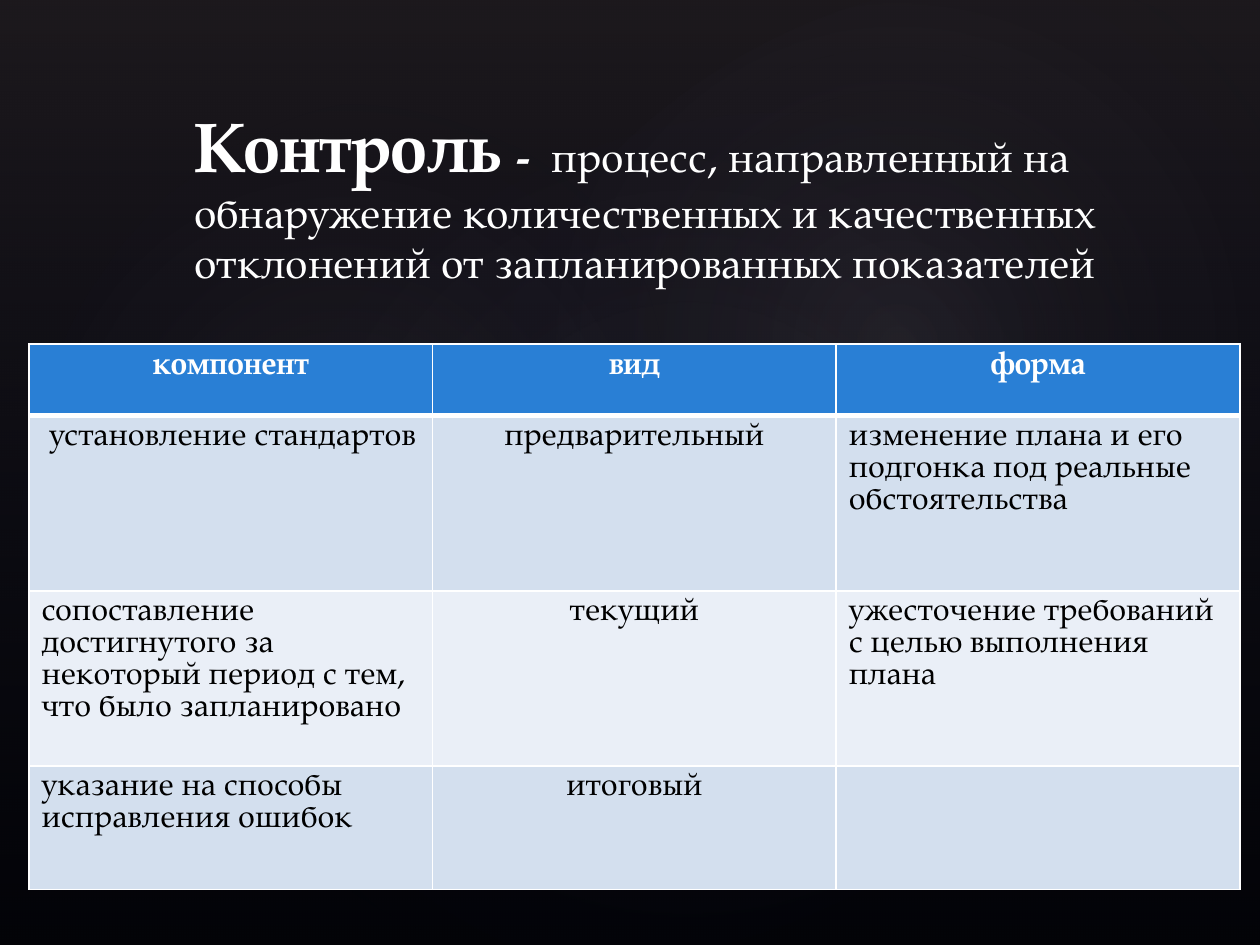
from lxml import etree
from pptx import Presentation
from pptx.dml.color import RGBColor
from pptx.enum.shapes import MSO_SHAPE
from pptx.enum.text import MSO_ANCHOR, PP_ALIGN
from pptx.oxml import parse_xml
from pptx.oxml.ns import nsdecls, qn
from pptx.util import Inches, Pt

FONT = "TeX Gyre Pagella"
WHITE = RGBColor(0xFF, 0xFF, 0xFF)
BLACK = RGBColor(0x00, 0x00, 0x00)
HEADER_BLUE = RGBColor(0x29, 0x7F, 0xD5)
BAND_DARK = RGBColor(0xD3, 0xDF, 0xEE)
BAND_LIGHT = RGBColor(0xEA, 0xEF, 0xF7)
PLUM = RGBColor(0x50, 0x46, 0x52)
NAVY = RGBColor(0x24, 0x28, 0x52)
MIST = RGBColor(0xC4, 0xBC, 0xC6)

# Content: title runs are text, size, bold
TITLE = [
    ("Контроль ", 40, True),
    ("-  ", 24, True),
    ("процесс, направленный на обнаружение количественных и качественных "
     "отклонений от запланированных показателей", 24, False),
]
HEADERS = ["компонент", "вид", "форма"]
ROWS = [
    (" установление стандартов", "предварительный",
     "изменение плана и его подгонка под реальные обстоятельства"),
    ("сопоставление достигнутого за некоторый период с тем, что было запланировано",
     "текущий", "ужесточение требований с целью выполнения плана"),
    ("указание на способы исправления ошибок", "итоговый", ""),
]
ROW_HEIGHTS = [0.57, 1.39, 1.39, 0.98]
TABLE_LEFT, TABLE_TOP, TABLE_WIDTH = 0.23, 2.73, 9.61
CENTERED_COLUMN = 1

# Background glows: left, top, width, height, rotation, opacity in percent
GLOWS = [
    (1.5, 1.14, 7.92, 6.24, 328.7, 7),
    (-0.3, 1.28, 6.06, 4.9, 294.3, 8),
    (3.58, 0.13, 7.09, 5.2, 328.7, 8),
]
LINEAR = '<a:lin ang="5400000" scaled="0"/>'
RADIAL = ('<a:path path="circle"><a:fillToRect l="50000" t="50000" '
          'r="50000" b="50000"/></a:path>')


def add_gradient_shape(slide, preset, box, stops, direction, rotation=0):
    shape = slide.shapes.add_shape(preset, *map(Inches, box))
    shape.rotation = rotation
    shape.shadow.inherit = False
    shape.line.fill.background()
    stop_xml = "".join(
        f'<a:gs pos="{pos * 1000}"><a:srgbClr val="{color}">'
        f'<a:alpha val="{opacity * 1000}"/></a:srgbClr></a:gs>'
        for pos, color, opacity in stops)
    gradient = parse_xml(f'<a:gradFill {nsdecls("a")} rotWithShape="1">'
                         f'<a:gsLst>{stop_xml}</a:gsLst>{direction}</a:gradFill>')
    shape._element.spPr.find(qn("a:prstGeom")).addnext(gradient)


def add_run(paragraph, text, size, bold, color):
    run = paragraph.add_run()
    run.text = text
    run.font.name, run.font.size, run.font.bold = FONT, Pt(size), bold
    run.font.color.rgb = color


def set_borders(cell, widths):
    properties = cell._tc.get_or_add_tcPr()
    for index, (side, width) in enumerate(widths.items()):
        line = parse_xml(f'<a:{side} {nsdecls("a")} w="{Pt(width)}"/>')
        fill = etree.SubElement(line, qn("a:solidFill"))
        etree.SubElement(fill, qn("a:srgbClr"), val=str(WHITE))
        properties.insert(index, line)


def fill_cell(cell, text, fill, color, bold, centered, widths):
    cell.fill.solid()
    cell.fill.fore_color.rgb = fill
    set_borders(cell, widths)
    paragraph = cell.text_frame.paragraphs[0]
    paragraph.alignment = PP_ALIGN.CENTER if centered else PP_ALIGN.LEFT
    paragraph.line_spacing = Pt(18.3)
    if text:
        add_run(paragraph, text, 18, bold, color)


def main():
    deck = Presentation()
    deck.slide_width, deck.slide_height = Inches(10), Inches(7.5)
    slide = deck.slides.add_slide(deck.slide_layouts[5])
    title = slide.shapes.title

    # Background
    slide.background.fill.solid()
    slide.background.fill.fore_color.rgb = BLACK
    add_gradient_shape(slide, MSO_SHAPE.RECTANGLE, (0, 0, 10, 7.5),
                       [(0, PLUM, 36), (100, NAVY, 10)], LINEAR)
    for *box, rotation, opacity in GLOWS:
        add_gradient_shape(slide, MSO_SHAPE.OVAL, box,
                           [(0, MIST, opacity), (58, NAVY, 0)], RADIAL, rotation)

    # Title, brought in front of the background
    slide.shapes._spTree.append(title._element)
    title.left, title.top = Inches(1.44), Inches(0.68)
    title.width, title.height = Inches(8.56), Inches(1.65)
    title.text_frame.word_wrap = True
    title.text_frame.vertical_anchor = MSO_ANCHOR.BOTTOM
    heading = title.text_frame.paragraphs[0]
    heading.alignment = PP_ALIGN.LEFT
    for text, size, bold in TITLE:
        add_run(heading, text, size, bold, WHITE)

    # Table
    table = slide.shapes.add_table(
        len(ROW_HEIGHTS), len(HEADERS), Inches(TABLE_LEFT), Inches(TABLE_TOP),
        Inches(TABLE_WIDTH), Inches(sum(ROW_HEIGHTS))).table
    for row, height in zip(table.rows, ROW_HEIGHTS):
        row.height = Inches(height)
    for r, texts in enumerate([HEADERS, *ROWS]):
        header = r == 0
        fill = HEADER_BLUE if header else (BAND_DARK if r % 2 else BAND_LIGHT)
        widths = {"lnL": 1, "lnR": 1, "lnT": 3 if r == 1 else 1,
                  "lnB": 3 if header else 1}
        for c, text in enumerate(texts):
            fill_cell(table.cell(r, c), text, fill, WHITE if header else BLACK,
                      header, header or c == CENTERED_COLUMN, widths)

    deck.save("out.pptx")


if __name__ == "__main__":
    main()
